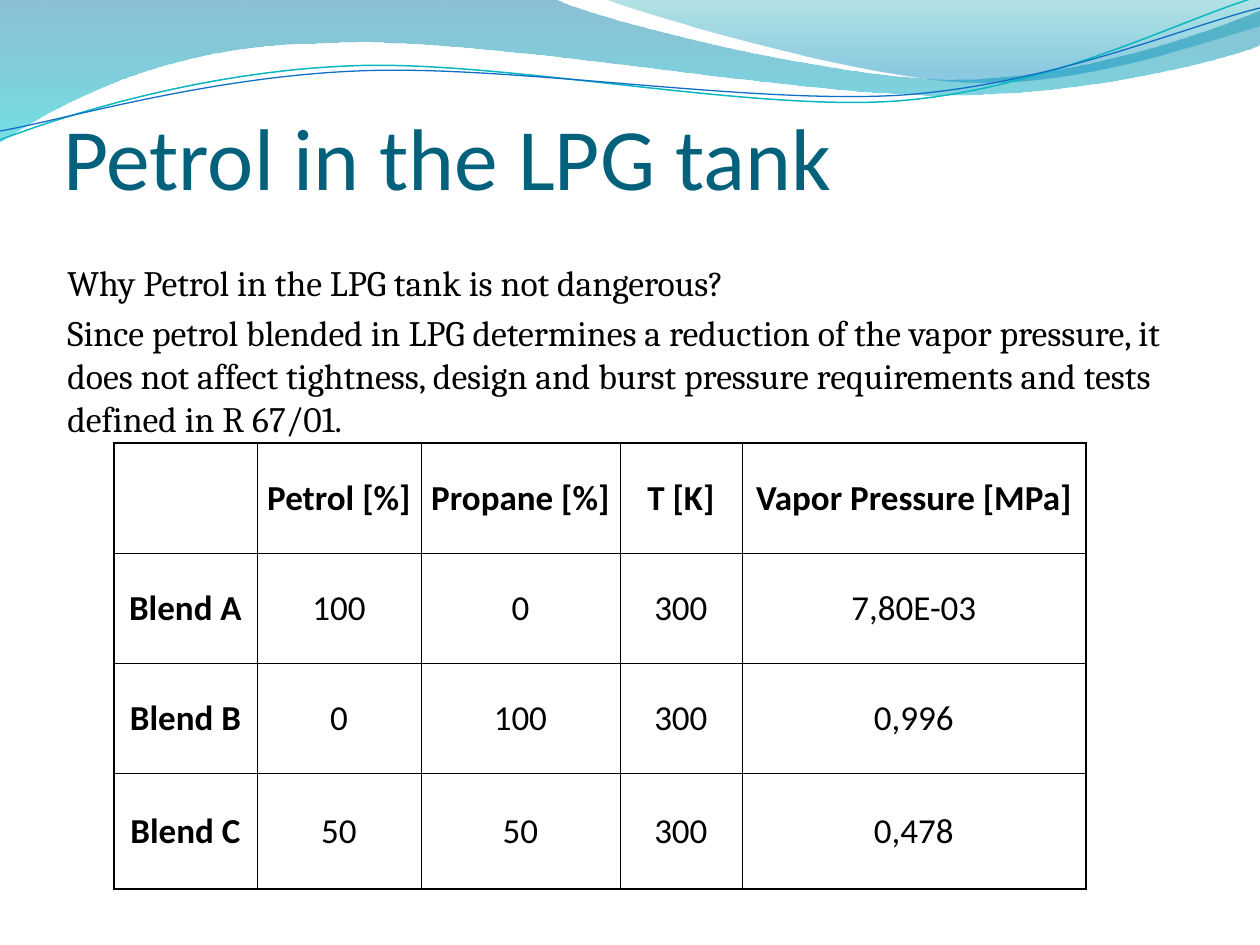
import math

from lxml import etree
from pptx import Presentation
from pptx import util as u
from pptx.dml.color import RGBColor
from pptx.enum import text
from pptx.oxml.ns import qn

SCALE = 914400 / 126
TILT = -2.7

# Each segment is one point (a line) or three points (a cubic curve).
BROAD_WAVE = [
    [(554, 0)],
    [(600, 22), (837, 80), (955, 80)],
    [(1075, 80), (1207, 34), (1260, 12)],
    [(1261, 46)],
    [(1239, 56), (1096, 97), (940, 96)],
    [(784, 96), (481, 36), (324, 44)],
    [(163, 45), (58, 106), (-1, 143)],
]
RIGHT_WAVE = [
    [(641, 15), (859, 79), (969, 83)],
    [(1079, 88), (1211, 41), (1260, 27)],
    [(1260, 1)],
]
TEAL_CURVE = [
    [(60, 118), (199, 73), (349, 67)],
    [(498, 60), (747, 113), (898, 102)],
    [(1050, 90), (1182, 20), (1257, -2)],
]
BLUE_CURVE = [
    [(59, 122), (207, 78), (357, 72)],
    [(508, 65), (752, 106), (903, 96)],
    [(1053, 85), (1186, 27), (1260, 9)],
]

PARAGRAPHS = [
    "Why Petrol in the LPG tank is not dangerous?",
    "Since petrol blended in LPG determines a reduction of the vapor pressure, "
    "it does not affect tightness, design and burst pressure requirements and "
    "tests defined in R 67/01.",
]
COLUMNS = [143, 164, 199, 122, 344]
ROWS = [110, 110, 110, 116]
BLENDS = [
    ["", "Petrol [%]", "Propane [%]", "T [K]", "Vapor Pressure [MPa]"],
    ["Blend A", "100", "0", "300", "7,80E-03"],
    ["Blend B", "0", "100", "300", "0,996"],
    ["Blend C", "50", "50", "300", "0,478"],
]


def px(n):
    return u.Emu(round(n * SCALE))


def rgb(color):
    return RGBColor.from_string(color)


def add_run(p, words, size, font, color, bold=False):
    r = p.add_run()
    r.text = words
    r.font.size = u.Pt(size)
    r.font.name = font
    r.font.bold = bold
    r.font.color.rgb = rgb(color)


def set_margins(target, left, top, right, bottom):
    target.margin_left, target.margin_top = px(left), px(top)
    target.margin_right, target.margin_bottom = px(right), px(bottom)


def solid_fill(parent, color):
    fill = etree.SubElement(parent, qn("a:solidFill"))
    etree.SubElement(fill, qn("a:srgbClr"), val=color)


def turn(point, center, degrees):
    """Turn a point clockwise about a center."""
    a = math.radians(degrees)
    dx, dy = point[0] - center[0], point[1] - center[1]
    return (center[0] + dx * math.cos(a) - dy * math.sin(a),
            center[1] + dx * math.sin(a) + dy * math.cos(a))


def add_path(slide, origin, start, segments, close):
    """Add a freeform, joining each group of three points into a curve."""
    x, y = origin
    builder = slide.shapes.build_freeform(px(x + start[0]), px(y + start[1]))
    builder.add_line_segments(
        [(px(x + a), px(y + b)) for seg in segments for a, b in seg], close)
    sp = builder.convert_to_shape()
    lines = iter(list(sp.element.iter(qn("a:lnTo"))))
    for seg in segments:
        steps = [next(lines) for _ in seg]
        if len(steps) == 3:
            curve = etree.Element(qn("a:cubicBezTo"))
            steps[0].addprevious(curve)
            for step in steps:
                curve.append(step[0])
                step.getparent().remove(step)
    sp.shadow.inherit = False
    sp.fill.background()
    return sp


def add_wave(slide, origin, start, segments, stops):
    """Add a filled wave; each stop is (position %, colour, opacity %)."""
    sp = add_path(slide, origin, start, segments, True)
    sp.line.fill.background()
    grad = etree.Element(qn("a:gradFill"), rotWithShape="1")
    stop_list = etree.SubElement(grad, qn("a:gsLst"))
    for position, color, opacity in stops:
        gs = etree.SubElement(stop_list, qn("a:gs"), pos=str(position * 1000))
        clr = etree.SubElement(gs, qn("a:srgbClr"), val=color)
        etree.SubElement(clr, qn("a:alpha"), val=str(opacity * 1000))
    etree.SubElement(grad, qn("a:lin"), ang="5400000", scaled="0")
    no_fill = sp.element.spPr.find(qn("a:noFill"))
    no_fill.getparent().replace(no_fill, grad)


def add_tilted_curve(slide, origin, center, start, segments, color, width):
    level = [[turn(pt, center, -TILT) for pt in seg] for seg in segments]
    sp = add_path(slide, origin, turn(start, center, -TILT), level, False)
    sp.rotation = TILT
    sp.line.color.rgb = rgb(color)
    sp.line.width = u.Pt(width)


def add_header(slide, x, y):
    origin = (x, y)
    add_wave(slide, origin, (0, 0), BROAD_WAVE,
             [(0, "0074A1", 45), (100, "00C6CF", 55)])
    add_wave(slide, origin, (604, 0), RIGHT_WAVE,
             [(0, "00A1A9", 30), (80, "008BBF", 45)])
    add_tilted_curve(slide, origin, (629, 73), (0, 141), TEAL_CURVE,
                     "0AB8BF", 0.85)
    add_tilted_curve(slide, origin, (629, 75), (0, 132), BLUE_CURVE,
                     "0F6FC6", 0.75)


def set_title(slide, x, y, w, h):
    title = slide.shapes.title
    title.left, title.top, title.width, title.height = map(px, (x, y, w, h))
    tf = title.text_frame
    tf.auto_size = text.MSO_AUTO_SIZE.NONE
    tf.vertical_anchor = text.MSO_ANCHOR.TOP
    set_margins(tf, 0, 6, 0, 0)
    p = tf.paragraphs[0]
    p.alignment = text.PP_ALIGN.LEFT
    add_run(p, "Petrol in the LPG tank", 50, "Calibri", "04617B")


def add_body(slide, x, y, w, h):
    tf = slide.shapes.add_textbox(*map(px, (x, y, w, h))).text_frame
    tf.word_wrap = True
    for i, words in enumerate(PARAGRAPHS):
        p = tf.add_paragraph() if i else tf.paragraphs[0]
        p.space_before = u.Pt(4)
        add_run(p, words, 20.4, "Cambria", "000000")


def set_borders(cell, widths):
    """Set the left, right, top and bottom border widths in points."""
    tc_pr = cell._tc.get_or_add_tcPr()
    for i, (side, width) in enumerate(zip("LRTB", widths)):
        ln = etree.Element(qn(f"a:ln{side}"), w=str(u.Pt(width)))
        solid_fill(ln, "000000")
        tc_pr.insert(i, ln)


def add_blend_table(slide, x, y):
    last_row, last_col = len(ROWS) - 1, len(COLUMNS) - 1
    table = slide.shapes.add_table(
        len(ROWS), len(COLUMNS), px(x), px(y),
        px(sum(COLUMNS)), px(sum(ROWS))).table
    table.first_row = table.horz_banding = False
    for column, width in zip(table.columns, COLUMNS):
        column.width = px(width)
    for r, (row, height) in enumerate(zip(table.rows, ROWS)):
        row.height = px(height)
        for c, cell in enumerate(row.cells):
            cell.fill.background()
            cell.vertical_anchor = text.MSO_ANCHOR.MIDDLE
            set_margins(cell, 1, 1, 1, 0)
            outer = (c == 0, c == last_col, r == 0, r == last_row)
            set_borders(cell, [1 if edge else 0.5 for edge in outer])
            if BLENDS[r][c]:
                p = cell.text_frame.paragraphs[0]
                p.alignment = text.PP_ALIGN.CENTER
                add_run(p, BLENDS[r][c], 20, "Calibri", "000000",
                        bold=r == 0 or c == 0)


def main():
    prs = Presentation()
    prs.slide_width, prs.slide_height = px(1260), px(945)
    slide = prs.slides.add_slide(prs.slide_layouts[5])
    add_header(slide, 0, -1)
    set_title(slide, 63, 97, 1134, 157)
    add_body(slide, 55, 255, 1143, 176)
    add_blend_table(slide, 114, 443)
    prs.save("out.pptx")


if __name__ == "__main__":
    main()
